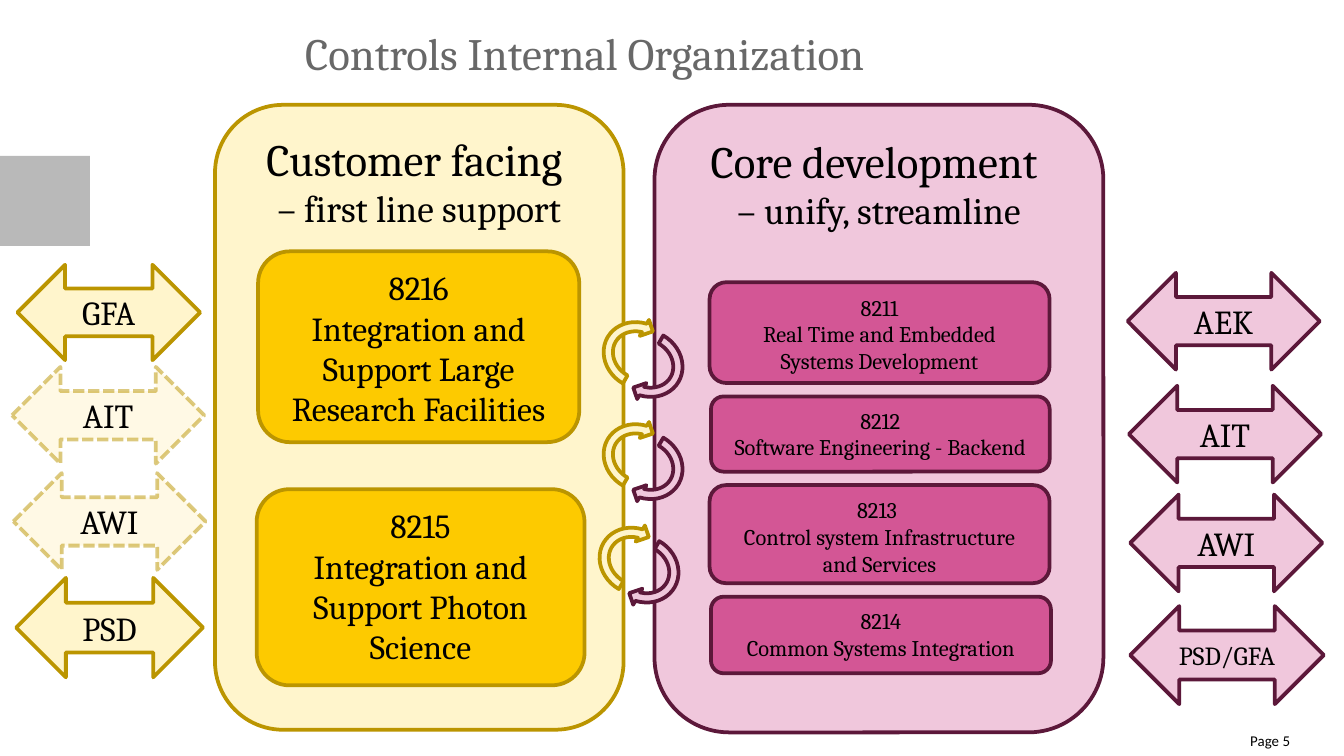
"""Build the Controls Internal Organization slide."""
from dataclasses import dataclass

import pptx
import pptx.dml.color
import pptx.enum.dml
import pptx.enum.shapes
import pptx.enum.text
import pptx.oxml.ns
import pptx.util
from lxml import etree

Inches = pptx.util.Inches
Shape = pptx.enum.shapes.MSO_SHAPE
Align = pptx.enum.text.PP_ALIGN
Anchor = pptx.enum.text.MSO_ANCHOR


@dataclass(frozen=True)
class Look:
    fill: str
    line: str
    faded: bool = False


@dataclass(frozen=True)
class Block:
    left: float
    top: float
    width: float
    height: float
    look: Look
    lines: tuple[str, ...]
    sizes: tuple[int, ...]


PALE_GOLD = Look("FFF5CC", "BB9500")
FADED_GOLD = Look("FFF5CC", "BA9400", faded=True)
GOLD = Look("FDCA00", "BB9500")
PALE_PINK = Look("F0C7DC", "5C183A")
PINK = Look("D35695", "5C183A")

PANELS = [
    Block(1.6, 0.78, 3.04, 4.65, PALE_GOLD, ("Customer facing ", "– first line support"), (24, 20)),
    Block(4.87, 0.78, 3.34, 4.67, PALE_PINK, ("Core development ", "– unify, streamline"), (24, 20)),
]
SECTIONS = [
    Block(1.92, 1.87, 2.39, 1.42, GOLD,
          ("8216", "Integration and Support Large Research Facilities"), (18, 18)),
    Block(1.91, 3.64, 2.44, 1.46, GOLD,
          ("8215", "Integration and Support Photon Science"), (18, 18)),
    Block(5.28, 2.1, 2.53, 0.75, PINK,
          ("8211", "Real Time and Embedded Systems Development"), (12, 12)),
    Block(5.29, 2.95, 2.52, 0.56, PINK, ("8212", "Software Engineering - Backend"), (12, 12)),
    Block(5.28, 3.61, 2.53, 0.73, PINK,
          ("8213 ", "Control system Infrastructure and Services"), (12, 12)),
    Block(5.29, 4.44, 2.53, 0.57, PINK, ("8214", "Common Systems Integration"), (12, 12)),
]
PARTNERS = [
    Block(0.12, 4.3, 1.39, 0.74, PALE_GOLD, ("PSD",), (18,)),
    Block(0.13, 1.97, 1.36, 0.71, PALE_GOLD, ("GFA",), (18,)),
    Block(8.39, 2.03, 1.43, 0.72, PALE_PINK, ("AEK",), (18,)),
    Block(8.41, 4.51, 1.44, 0.73, PALE_PINK, ("PSD/GFA",), (14,)),
    Block(8.4, 2.87, 1.43, 0.72, PALE_PINK, ("AIT",), (18,)),
    Block(8.41, 3.68, 1.43, 0.72, PALE_PINK, ("AWI",), (18,)),
    Block(0.09, 2.73, 1.43, 0.72, FADED_GOLD, ("AIT",), (18,)),
    Block(0.1, 3.52, 1.43, 0.72, FADED_GOLD, ("AWI",), (18,)),
]
CYCLES = [(4.48, 2.34), (4.48, 3.1), (4.45, 3.87)]


def color(value: str) -> pptx.dml.color.RGBColor:
    return pptx.dml.color.RGBColor.from_string(value)


def paint(shape, look: Look) -> None:
    shape.shadow.inherit = False
    shape.fill.solid()
    shape.fill.fore_color.rgb = color(look.fill)
    shape.line.color.rgb = color(look.line)
    shape.line.width = pptx.util.Pt(2)
    if look.faded:
        shape.line.dash_style = pptx.enum.dml.MSO_LINE.SQUARE_DOT
        name = pptx.oxml.ns.qn
        for tint in shape.element.spPr.iter(name("a:srgbClr")):
            etree.SubElement(tint, name("a:alpha"), val="50000")


def write(frame, lines: tuple[str, ...], sizes: tuple[int, ...], align,
          font: str = "Cambria", ink: str = "000000") -> None:
    frame.word_wrap = True
    frame.text = "\n".join(lines)
    for para, size in zip(frame.paragraphs, sizes):
        para.alignment = align
        for span in para.runs:
            span.font.name = font
            span.font.size = pptx.util.Pt(size)
            span.font.color.rgb = color(ink)


def add_block(page, kind, block: Block, anchor) -> None:
    shape = page.shapes.add_shape(kind, Inches(block.left), Inches(block.top),
                                  Inches(block.width), Inches(block.height))
    paint(shape, block.look)
    shape.text_frame.vertical_anchor = anchor
    write(shape.text_frame, block.lines, block.sizes, Align.CENTER)


def add_cycle(page, left: float, top: float) -> None:
    group = page.shapes.add_group_shape()
    for shift, turn, look in ((0, 300, PALE_GOLD), (0.06, 120, PALE_PINK)):
        arrow = group.shapes.add_shape(Shape.CIRCULAR_ARROW, Inches(left + shift),
                                       Inches(top + shift), Inches(0.55), Inches(0.61))
        arrow.rotation = turn
        paint(arrow, look)


def add_label(page, left: float, top: float, width: float, height: float,
              text: str, size: int, align, font: str, ink: str) -> None:
    box = page.shapes.add_textbox(Inches(left), Inches(top), Inches(width), Inches(height))
    frame = box.text_frame
    frame.margin_left = frame.margin_right = frame.margin_top = frame.margin_bottom = 0
    frame.vertical_anchor = Anchor.MIDDLE
    write(frame, (text,), (size,), align, font, ink)


def main() -> None:
    deck = pptx.Presentation()
    deck.slide_width = Inches(10)
    deck.slide_height = deck.slide_width * 9 // 16
    page = deck.slides.add_slide(deck.slide_layouts[6])

    marker = page.shapes.add_shape(Shape.RECTANGLE, 0, Inches(1.16), Inches(0.67), Inches(0.67))
    paint(marker, Look("B9B9B9", "B9B9B9"))
    marker.line.fill.background()

    add_label(page, 2.27, 0.18, 7.34, 0.42, "Controls Internal Organization", 24,
              Align.LEFT, "Cambria", "686868")
    add_label(page, 8.97, 5.43, 0.63, 0.16, "Page 5", 8, Align.RIGHT, "Calibri", "000000")

    for block in PANELS + SECTIONS:
        add_block(page, Shape.ROUNDED_RECTANGLE, block, Anchor.TOP)
    for left, top in CYCLES:
        add_cycle(page, left, top)
    for block in PARTNERS:
        add_block(page, Shape.LEFT_RIGHT_ARROW, block, Anchor.MIDDLE)

    deck.save("out.pptx")


if __name__ == "__main__":
    main()
